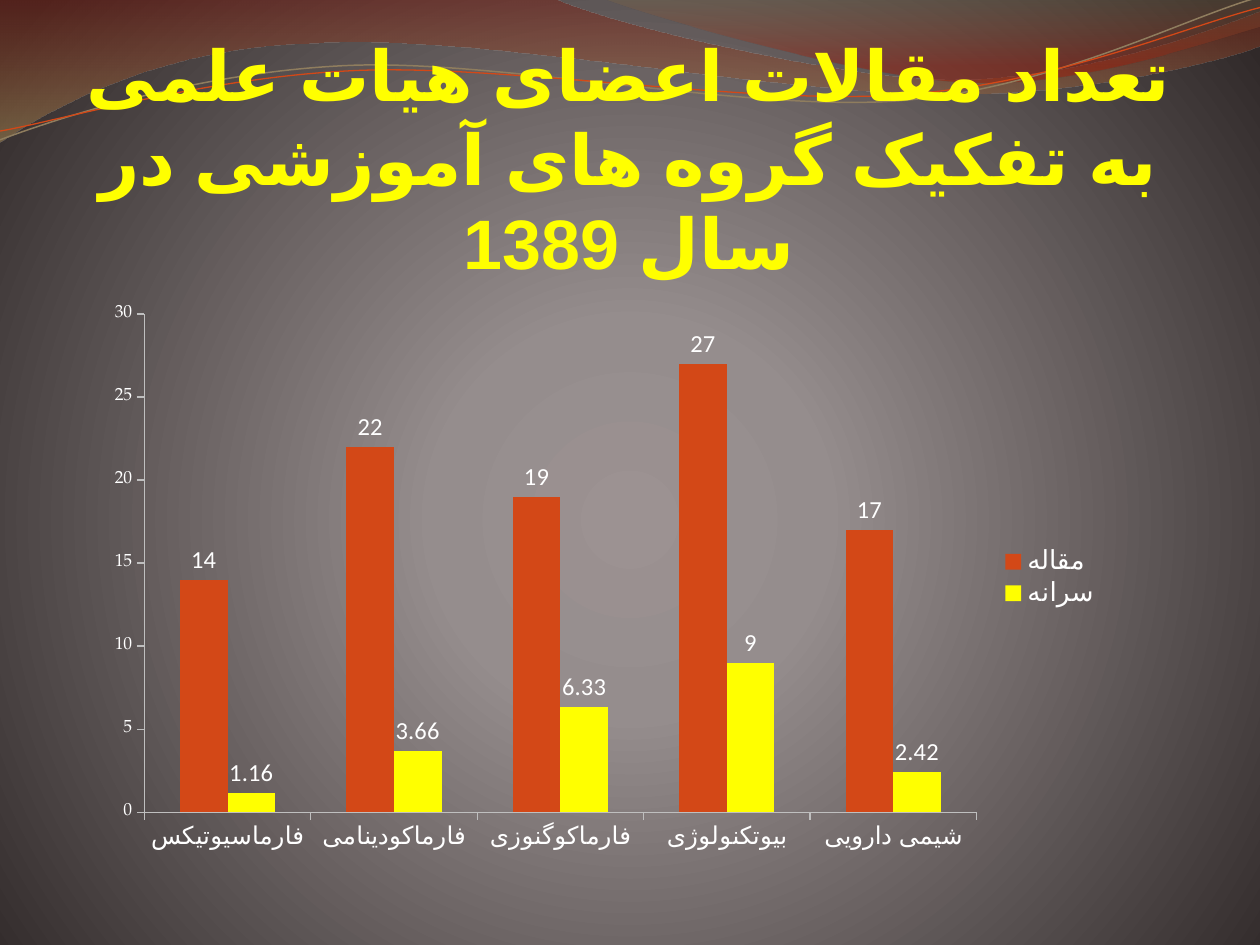
import math
from dataclasses import dataclass
from typing import Optional

from lxml import etree
from pptx import Presentation
from pptx import util as u
from pptx.chart.data import CategoryChartData
from pptx.dml.color import RGBColor
from pptx.enum import chart as charts, text
from pptx.oxml import parse_xml
from pptx.oxml.ns import nsdecls, qn

WHITE, YELLOW, ORANGE, AXIS_GREY = "FFFFFF", "FFFF00", "D34817", "BFBFBF"


@dataclass
class Stop:
    position: int
    color: str
    opacity: int = 100


@dataclass
class Wave:
    """Segments hold one end point (line) or two handles and an end point (curve)."""
    start: tuple[float, float]
    segments: list[tuple[float, ...]]
    stops: Optional[list[Stop]] = None
    line_color: str = ""
    line_width: float = 0
    rotation: float = 0
    center: tuple[float, float] = (0, 0)


@dataclass
class Series:
    name: str
    values: list[float]
    color: str


WAVES = [
    Wave((0, 0), [
        (316.8, -0.7), (342.7, 12.2, 478, 45.4, 545.8, 45.4),
        (614.2, 45.4, 689.8, 18.7, 720, 6.5), (720.7, 25.9),
        (707.8, 31.7, 626.4, 54.7, 537.1, 54),
        (447.8, 54, 275, 20.2, 185, 24.5),
        (92.9, 25.9, 33.1, 59.8, -0.7, 81.4),
    ], stops=[Stop(0, "7C1A0E", 45), Stop(100, "A18552", 55)]),
    Wave((344.9, -0.7), [
        (366.5, 7.9, 491, 44.6, 553.7, 46.8),
        (616.3, 49.7, 691.9, 23, 720, 15.1), (720, 0),
    ], stops=[Stop(0, "7E6B48", 30), Stop(80, "9F1705", 45)]),
    Wave((0, 79.9), [
        (34.6, 67, 113.8, 41, 199.4, 37.4),
        (284.4, 33.8, 427, 64.1, 513.4, 57.6),
        (599.8, 51.1, 675.4, 10.8, 718.6, -1.4),
    ], line_color="8F7D5E", line_width=0.85, rotation=-2.7, center=(359.3, 41.4)),
    Wave((0, 74.9), [
        (33.8, 69.1, 118.1, 43.9, 203.8, 40.3),
        (290.2, 36.7, 429.8, 60.5, 516.2, 54),
        (601.9, 48.2, 677.5, 15.1, 720, 4.3),
    ], line_color=ORANGE, line_width=0.75, rotation=-2.7, center=(359.6, 42.5)),
]
BACKGROUND_STOPS = [Stop(0, "9C9292"), Stop(25, "958D8D"), Stop(100, "302929")]
LINEAR_DOWN = '<a:lin ang="5400000" scaled="0"/>'
RADIAL = ('<a:path path="circle"><a:fillToRect l="10000" t="110000" '
          'r="10000" b="100000"/></a:path>')

TITLE = "تعداد مقالات اعضای هیات علمی به تفکیک گروه های آموزشی در سال 1389"
DEPARTMENTS = ["فارماسیوتیکس", "فارماکودینامی", "فارماکوگنوزی", "بیوتکنولوژی", "شیمی دارویی"]
SERIES = [
    Series("مقاله", [14, 22, 19, 27, 17], ORANGE),
    Series("سرانه", [1.16, 3.66, 6.33, 9, 2.42], YELLOW),
]


def rgb(color: str) -> RGBColor:
    return RGBColor.from_string(color)


def set_values(target, values: dict) -> None:
    for name, value in values.items():
        setattr(target, name, value)


def set_font(font, size: float, name: str = "Calibri", color: str = WHITE, bold: bool = False) -> None:
    set_values(font, {"size": u.Pt(size), "name": name, "bold": bold})
    font.color.rgb = rgb(color)


def set_gradient(fill, owner, stops: list[Stop], direction: str) -> None:
    """Swap the solid fill inside owner for a gradient with transparency."""
    fill.solid()
    solid = owner.find(".//" + qn("a:solidFill"))
    stop_xml = "".join(
        f'<a:gs pos="{stop.position * 1000}"><a:srgbClr val="{stop.color}">'
        f'<a:alpha val="{stop.opacity * 1000}"/></a:srgbClr></a:gs>' for stop in stops)
    gradient = parse_xml(f'<a:gradFill {nsdecls("a")} rotWithShape="1">'
                         f'<a:gsLst>{stop_xml}</a:gsLst>{direction}</a:gradFill>')
    solid.getparent().replace(solid, gradient)


def level_point(wave: Wave, x: float, y: float) -> tuple[int, int]:
    """Undo the rotation of the wave for one point."""
    angle = math.radians(-wave.rotation)
    center_x, center_y = wave.center
    dx, dy = x - center_x, y - center_y
    return (u.Pt(center_x + dx * math.cos(angle) - dy * math.sin(angle)),
            u.Pt(center_y + dx * math.sin(angle) + dy * math.cos(angle)))


def draw_wave(slide, wave: Wave) -> None:
    # Outline through the end points
    segments = [[level_point(wave, *pair) for pair in zip(segment[::2], segment[1::2])]
                for segment in wave.segments]
    builder = slide.shapes.build_freeform(*level_point(wave, *wave.start))
    builder.add_line_segments([points[-1] for points in segments], close=bool(wave.stops))
    shape = builder.convert_to_shape()

    # Lines with handles become curves
    lines = shape.element.findall(".//" + qn("a:lnTo"))
    for line, points in zip(lines, segments):
        if len(points) == 3:
            curve = etree.Element(qn("a:cubicBezTo"))
            for x, y in points:
                point = etree.SubElement(curve, qn("a:pt"))
                point.set("x", str(x - shape.left))
                point.set("y", str(y - shape.top))
            line.getparent().replace(line, curve)

    shape.rotation = wave.rotation
    shape.shadow.inherit = False
    if wave.stops:
        set_gradient(shape.fill, shape.element.spPr, wave.stops, LINEAR_DOWN)
        shape.line.fill.background()
    else:
        shape.fill.background()
        shape.line.color.rgb = rgb(wave.line_color)
        shape.line.width = u.Pt(wave.line_width)


def draw_title(slide) -> None:
    box = slide.shapes.add_textbox(u.Pt(30), u.Pt(18), u.Pt(660), u.Pt(144))
    set_values(box.text_frame, {
        "word_wrap": True, "vertical_anchor": text.MSO_ANCHOR.BOTTOM,
        "margin_left": 0, "margin_top": 0, "margin_right": u.Pt(1.5), "margin_bottom": 0})
    paragraph = box.text_frame.paragraphs[0]
    paragraph.alignment = text.PP_ALIGN.CENTER
    paragraph._p.get_or_add_pPr().set("rtl", "1")
    run = paragraph.add_run()
    run.text = TITLE
    set_font(run.font, 40, color=YELLOW, bold=True)
    # Persian language and a font for the right-to-left script
    properties = run._r.get_or_add_rPr()
    properties.set("lang", "fa-IR")
    etree.SubElement(properties, qn("a:cs")).set("typeface", "Arial")


def draw_chart(slide) -> None:
    data = CategoryChartData()
    data.categories = DEPARTMENTS
    for series in SERIES:
        data.add_series(series.name, series.values)
    chart = slide.shapes.add_chart(charts.XL_CHART_TYPE.COLUMN_CLUSTERED, u.Pt(54), u.Pt(168),
                                   u.Pt(582), u.Pt(324), data).chart
    set_font(chart.font, 10, "TeX Gyre Pagella")
    set_values(chart, {"has_title": False, "has_legend": True})
    set_values(chart.legend, {"position": charts.XL_LEGEND_POSITION.RIGHT,
                              "include_in_layout": False})
    set_font(chart.legend.font, 15)

    # Axes
    for axis in (chart.category_axis, chart.value_axis):
        set_values(axis, {"has_major_gridlines": False,
                          "major_tick_mark": charts.XL_TICK_MARK.OUTSIDE})
        axis.format.line.color.rgb = rgb(AXIS_GREY)
    set_font(chart.category_axis.tick_labels.font, 14)
    set_values(chart.value_axis, {"minimum_scale": 0, "maximum_scale": 30, "major_unit": 5})

    # Columns and their values
    plot = chart.plots[0]
    set_values(plot, {"gap_width": 150, "overlap": 0, "vary_by_categories": False})
    for column, series in zip(plot.series, SERIES):
        column.format.fill.solid()
        column.format.fill.fore_color.rgb = rgb(series.color)
        set_values(column.data_labels, {"show_value": True,
                                        "position": charts.XL_LABEL_POSITION.OUTSIDE_END})
        set_font(column.data_labels.font, 14)


def main() -> None:
    presentation = Presentation()
    set_values(presentation, {"slide_width": u.Pt(720), "slide_height": u.Pt(540)})
    slide = presentation.slides.add_slide(presentation.slide_layouts[6])
    set_gradient(slide.background.fill, slide.element, BACKGROUND_STOPS, RADIAL)
    for wave in WAVES:
        draw_wave(slide, wave)
    draw_title(slide)
    draw_chart(slide)
    presentation.save("out.pptx")


if __name__ == "__main__":
    main()
